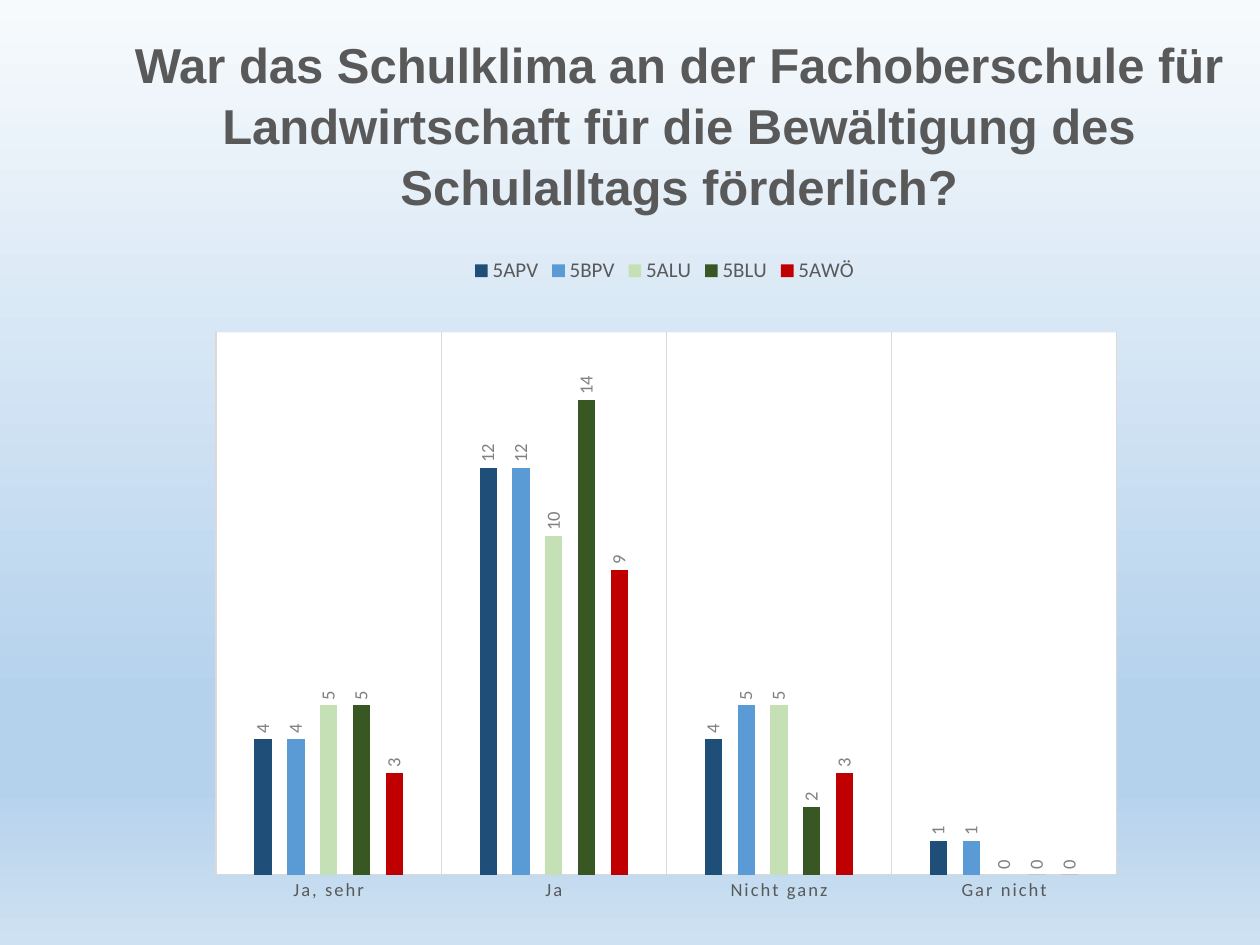
import pptx
import pptx.chart.data
import pptx.dml.color
import pptx.enum.chart
import pptx.enum.text
import pptx.oxml
import pptx.oxml.ns
import pptx.util

Pt = pptx.util.Pt
qn = pptx.oxml.ns.qn

COLORS = {
    "text": "595959",
    "label": "808080",
    "grid": "D9D9D9",
    "plot": "FFFFFF",
    "5APV": "1F4E79",
    "5BPV": "5B9BD5",
    "5ALU": "C5E0B4",
    "5BLU": "385723",
    "5AWÖ": "C00000",
}
BACKGROUND_STOPS = [(0, "F7FAFD"), (74, "B5D2EC"), (83, "B5D2EC"), (100, "CEE1F2")]

TITLE = ("War das Schulklima an der Fachoberschule für Landwirtschaft "
         "für die Bewältigung des Schulalltags förderlich?")
ANSWERS = ["Ja, sehr", "Ja", "Nicht ganz", "Gar nicht"]
VOTES = {
    "5APV": [4, 12, 4, 1],
    "5BPV": [4, 12, 5, 1],
    "5ALU": [5, 10, 5, 0],
    "5BLU": [5, 14, 2, 0],
    "5AWÖ": [3, 9, 3, 0],
}


def rgb(name):
    return pptx.dml.color.RGBColor.from_string(COLORS[name])


def style_font(font, family, size, color):
    font.name = family
    font.size = Pt(size)
    font.color.rgb = rgb(color)


def xml(tag, content):
    """Parse one element of the chart or drawing namespace."""
    declarations = pptx.oxml.ns.nsdecls("a", "c")
    name = tag.split()[0]
    return pptx.oxml.parse_xml(f"<{tag} {declarations}>{content}</{name}>")


def paint_background(page):
    fill = page.background.fill
    fill.gradient()
    fill.gradient_angle = 270  # counter-clockwise: top to bottom
    stops = page.background._cSld.find(".//" + qn("a:gsLst"))
    for stop in list(stops):
        stops.remove(stop)
    for percent, color in BACKGROUND_STOPS:
        stops.append(xml(f'a:gs pos="{percent * 1000}"', f'<a:srgbClr val="{color}"/>'))


def add_title(page, left, top, width, height):
    box = page.shapes.add_textbox(Pt(left), Pt(top), Pt(width), Pt(height))
    frame = box.text_frame
    frame.word_wrap = True
    frame.vertical_anchor = pptx.enum.text.MSO_ANCHOR.MIDDLE
    para = frame.paragraphs[0]
    para.text = TITLE
    para.alignment = pptx.enum.text.PP_ALIGN.CENTER
    para.line_spacing = 1.04
    style_font(para.font, "Arial", 28, "text")
    para.font.bold = True


def style_plot_area(chart):
    """Fix the inner plot rectangle and give it a plain fill."""
    area = chart._chartSpace.find(".//" + qn("c:plotArea"))
    for layout in area.findall(qn("c:layout")):
        area.remove(layout)
    places = {"x": 0.025, "y": 0.13, "w": 0.954, "h": 0.8}
    rules = '<c:layoutTarget val="inner"/><c:xMode val="edge"/><c:yMode val="edge"/>'
    rules += "".join(f'<c:{key} val="{value}"/>' for key, value in places.items())
    area.insert(0, xml("c:layout", f"<c:manualLayout>{rules}</c:manualLayout>"))
    area.append(xml("c:spPr", f'<a:solidFill><a:srgbClr val="{COLORS["plot"]}"/></a:solidFill>'))


def style_series(series):
    series.format.fill.solid()
    series.format.fill.fore_color.rgb = rgb(series.name)
    labels = series.data_labels
    labels.show_value = True
    labels.position = pptx.enum.chart.XL_LABEL_POSITION.OUTSIDE_END
    style_font(labels.font, "Calibri", 10.6, "label")
    # Values read upwards
    body = labels._element.find(".//" + qn("a:bodyPr"))
    body.set("rot", "-5400000")
    body.set("vert", "horz")


def style_axes(chart):
    values = chart.value_axis
    values.visible = False
    values.has_major_gridlines = False
    values.minimum_scale = 0
    values.maximum_scale = 16

    answers = chart.category_axis
    answers.major_tick_mark = pptx.enum.chart.XL_TICK_MARK.NONE
    answers.has_major_gridlines = True
    for line in (answers.format.line, answers.major_gridlines.format.line):
        line.color.rgb = rgb("grid")
        line.width = Pt(0.75)
    style_font(answers.tick_labels.font, "Calibri", 10.6, "text")
    answers._element.find(".//" + qn("a:defRPr")).set("spc", "120")


def add_votes_chart(page, left, top, width, height):
    data = pptx.chart.data.CategoryChartData()
    data.categories = ANSWERS
    for school_class, votes in VOTES.items():
        data.add_series(school_class, votes)
    chart = page.shapes.add_chart(
        pptx.enum.chart.XL_CHART_TYPE.COLUMN_CLUSTERED,
        Pt(left), Pt(top), Pt(width), Pt(height), data).chart
    chart.has_title = False
    chart.font.name = "Calibri"
    chart.font.size = Pt(10)

    # Columns
    plot = chart.plots[0]
    plot.gap_width = 444
    plot.overlap = -90
    plot.vary_by_categories = False
    for series in plot.series:
        style_series(series)

    # Legend
    chart.has_legend = True
    chart.legend.position = pptx.enum.chart.XL_LEGEND_POSITION.TOP
    chart.legend.include_in_layout = False
    style_font(chart.legend.font, "Calibri", 12, "text")

    style_axes(chart)
    style_plot_area(chart)


def main():
    deck = pptx.Presentation()
    deck.slide_width = Pt(720)
    deck.slide_height = Pt(540)
    page = deck.slides.add_slide(deck.slide_layouts[6])
    paint_background(page)
    add_votes_chart(page, 110, 139.5, 539.5, 387.5)
    add_title(page, 46.8, 16.5, 682.5, 108.7)
    deck.save("out.pptx")


if __name__ == "__main__":
    main()
